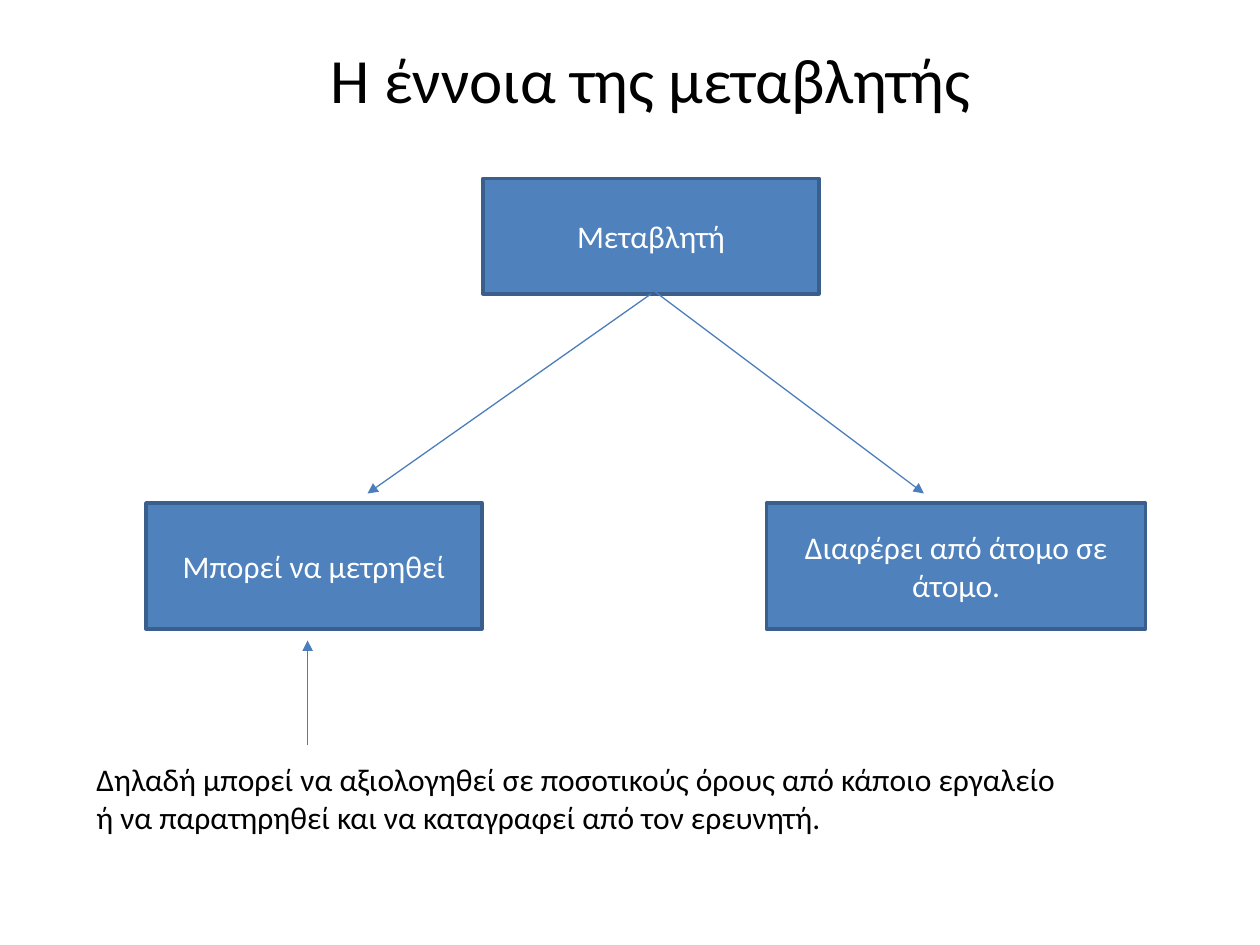
from dataclasses import dataclass

from lxml.etree import SubElement
from pptx import Presentation
from pptx.dml.color import RGBColor
from pptx.enum.shapes import MSO_CONNECTOR, MSO_SHAPE
from pptx.enum.text import MSO_ANCHOR, PP_ALIGN
from pptx.oxml.ns import qn
from pptx.util import Inches, Pt

COLS, ROWS = 120, 90
WIDE, HIGH = Inches(10), Inches(7.5)
FILL, EDGE, LINE = "4F81BD", "3A5F8C", "4B7EBC"
BLACK, WHITE = "000000", "FFFFFF"


@dataclass
class Box:
    col: float
    row: float
    cols: float
    rows: float
    text: str


@dataclass
class Arrow:
    col: float
    row: float
    to_col: float
    to_row: float


TITLE = Box(6, 3.5, 112, 8, "Η έννοια της μεταβλητής")
NOTE = Box(8, 71.8, 101, 8.5,
           "Δηλαδή μπορεί να αξιολογηθεί σε ποσοτικούς όρους από κάποιο εργαλείο\n"
           "ή να παρατηρηθεί και να καταγραφεί από τον ερευνητή.")
ITEMS = [
    Box(46, 17, 32, 11, "Μεταβλητή"),
    Arrow(62, 28, 35, 47),
    Arrow(62, 27.5, 88, 47),
    Box(13.9, 47.9, 32, 12, "Μπορεί να μετρηθεί"),
    Box(73, 47.9, 36.1, 12, "Διαφέρει από άτομο σε άτομο."),
    Arrow(29.3, 71, 29.3, 61),
]


def hue(code: str) -> RGBColor:
    return RGBColor.from_string(code)


def across(n: float) -> int:
    return round(WIDE * n / COLS)


def down(n: float) -> int:
    return round(HIGH * n / ROWS)


def place(box: Box) -> tuple:
    return across(box.col), down(box.row), across(box.cols), down(box.rows)


def apply(thing, style: dict) -> None:
    for name, value in style.items():
        setattr(thing, name, value)


def write(shape, text: str, size: int, ink: str, align, anchor) -> None:
    frame = shape.text_frame
    apply(frame, {"text": text, "word_wrap": True, "vertical_anchor": anchor})
    for para in frame.paragraphs:
        para.alignment = align
        apply(para.font, {"name": "Calibri", "size": Pt(size)})
        para.font.color.rgb = hue(ink)


def label(slide, box: Box, size: int, align, anchor) -> None:
    write(slide.shapes.add_textbox(*place(box)), box.text, size, BLACK, align, anchor)


def block(slide, box: Box) -> None:
    shape = slide.shapes.add_shape(MSO_SHAPE.RECTANGLE, *place(box))
    shape.shadow.inherit = False
    shape.fill.solid()
    shape.fill.fore_color.rgb = hue(FILL)
    shape.line.color.rgb = hue(EDGE)
    shape.line.width = Pt(2)
    write(shape, box.text, 18, WHITE, PP_ALIGN.CENTER, MSO_ANCHOR.MIDDLE)


def link(slide, arrow: Arrow) -> None:
    line = slide.shapes.add_connector(
        MSO_CONNECTOR.STRAIGHT, across(arrow.col), down(arrow.row),
        across(arrow.to_col), down(arrow.to_row))
    line.line.color.rgb = hue(LINE)
    line.line.width = Pt(0.75)
    SubElement(line.line._get_or_add_ln(), qn("a:tailEnd"), type="triangle")
    SubElement(line._element.spPr, qn("a:effectLst"))


def main() -> None:
    deck = Presentation()
    apply(deck, {"slide_width": WIDE, "slide_height": HIGH})
    slide = deck.slides.add_slide(deck.slide_layouts[6])
    label(slide, TITLE, 36, PP_ALIGN.CENTER, MSO_ANCHOR.MIDDLE)
    for item in ITEMS:
        draw = block if isinstance(item, Box) else link
        draw(slide, item)
    label(slide, NOTE, 18, PP_ALIGN.LEFT, MSO_ANCHOR.TOP)
    deck.save("out.pptx")


if __name__ == "__main__":
    main()
